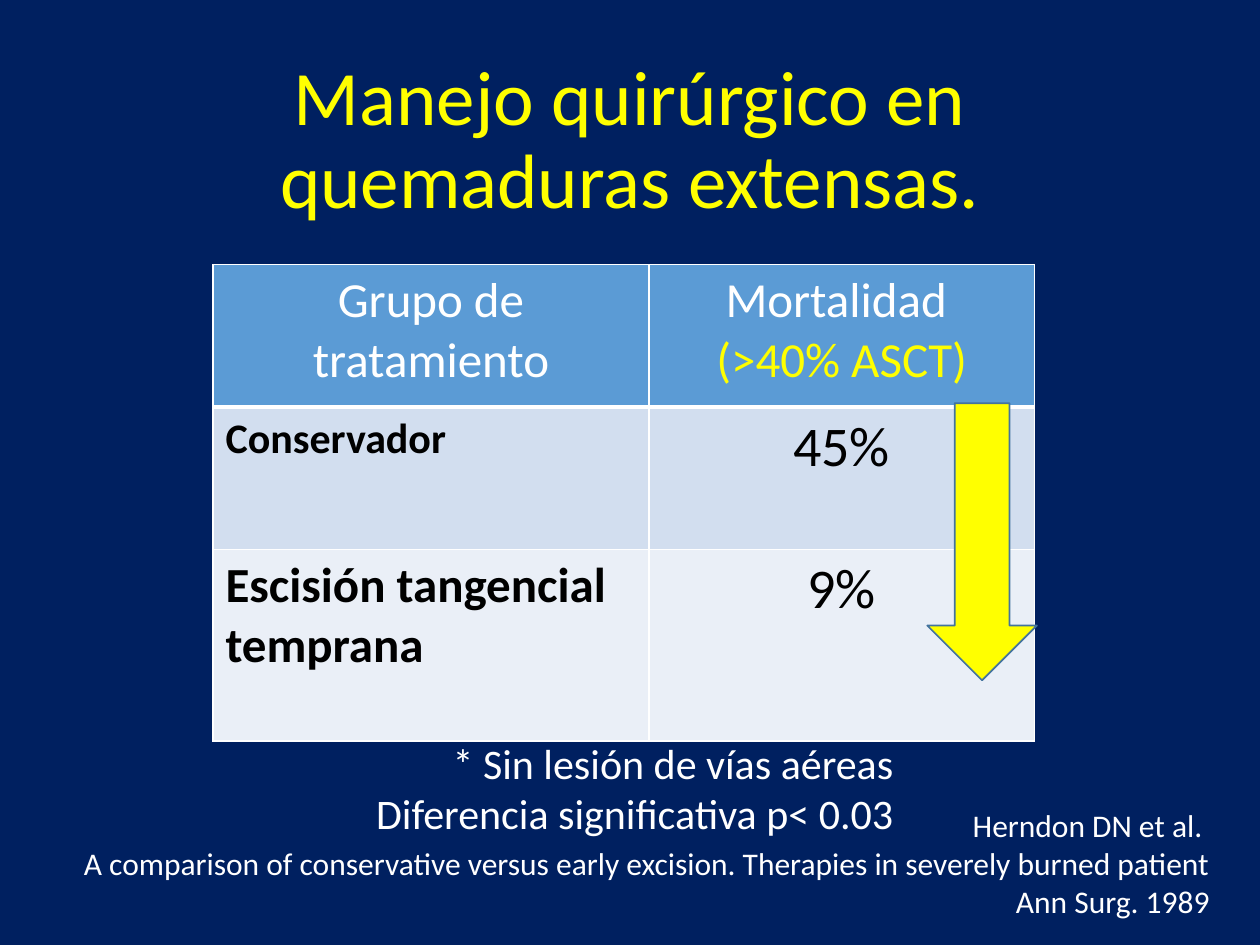
from lxml.etree import SubElement
from pptx import Presentation
from pptx.dml.color import RGBColor
from pptx.enum.shapes import MSO_SHAPE
from pptx.enum.text import MSO_ANCHOR, MSO_AUTO_SIZE, PP_ALIGN
from pptx.oxml.ns import qn
from pptx.util import Inches, Pt

NAVY = RGBColor(0x00, 0x20, 0x60)
YELLOW = RGBColor(0xFF, 0xFF, 0x00)
WHITE = RGBColor(0xFF, 0xFF, 0xFF)
BLACK = RGBColor(0x00, 0x00, 0x00)
HEADER_BLUE = RGBColor(0x5B, 0x9B, 0xD5)
BAND_DARK = RGBColor(0xD2, 0xDE, 0xEF)
BAND_LIGHT = RGBColor(0xEA, 0xEF, 0xF7)
ARROW_EDGE = RGBColor(0x43, 0x73, 0x9E)
CENTER, LEFT, RIGHT = PP_ALIGN.CENTER, PP_ALIGN.LEFT, PP_ALIGN.RIGHT


def write_lines(frame, lines, size, align, bold=False):
    for index, (text, color) in enumerate(lines):
        paragraph = frame.paragraphs[0] if index == 0 else frame.add_paragraph()
        paragraph.alignment = align
        run = paragraph.add_run()
        run.text = text
        run.font.name = "Calibri"
        run.font.size = Pt(size)
        run.font.bold = bold
        run.font.color.rgb = color


def add_border(cell, side, width):
    line = SubElement(cell._tc.get_or_add_tcPr(), qn(f"a:ln{side}"), w=str(Pt(width)))
    fill = SubElement(line, qn("a:solidFill"))
    SubElement(fill, qn("a:srgbClr"), val=str(WHITE))


presentation = Presentation()
presentation.slide_width = Inches(10)
presentation.slide_height = Inches(7.5)
slide = presentation.slides.add_slide(presentation.slide_layouts[5])
slide.background.fill.solid()
slide.background.fill.fore_color.rgb = NAVY

title = slide.shapes.title
title.left, title.top = Inches(0.69), Inches(0.4)
title.width, title.height = Inches(8.62), Inches(1.45)
title.text_frame.vertical_anchor = MSO_ANCHOR.MIDDLE
title.text_frame.auto_size = MSO_AUTO_SIZE.NONE
write_lines(title.text_frame, [("Manejo quirúrgico en quemaduras extensas.", YELLOW)], 44, CENTER)
title.text_frame.paragraphs[0].line_spacing = 0.9

column_widths = [3.46, 3.06]
row_heights = [1.13, 1.13, 1.52]
table_rows = [
    (HEADER_BLUE, [
        ([("Grupo de tratamiento", WHITE)], 28, CENTER, False),
        ([("Mortalidad ", WHITE), ("(>40% ASCT)", YELLOW)], 28, CENTER, False),
    ]),
    (BAND_DARK, [
        ([("Conservador", BLACK)], 24, LEFT, True),
        ([("45%", BLACK)], 32, CENTER, False),
    ]),
    (BAND_LIGHT, [
        ([("Escisión tangencial temprana", BLACK)], 28, LEFT, True),
        ([("9%", BLACK)], 32, CENTER, False),
    ]),
]
table = slide.shapes.add_table(
    len(row_heights), len(column_widths), Inches(1.69), Inches(2.1),
    Inches(sum(column_widths)), Inches(sum(row_heights))).table
for column, width in zip(table.columns, column_widths):
    column.width = Inches(width)
for row, height, (band, contents) in zip(table.rows, row_heights, table_rows):
    row.height = Inches(height)
    for cell, content in zip(row.cells, contents):
        write_lines(cell.text_frame, *content)
        for side in "LRTB":
            add_border(cell, side, 3 if side == "B" and band == HEADER_BLUE else 1)
        cell.fill.solid()
        cell.fill.fore_color.rgb = band

notes = [
    ((2.19, 5.8, 5, 1.31), 24, True,
     ["* Sin lesión de vías aéreas", "Diferencia significativa p< 0.03"]),
    ((0.46, 6.35, 9.24, 1.01), 18, False,
     ["Herndon DN et al. ",
      "A comparison of conservative versus early excision. Therapies in severely burned patient",
      "Ann Surg. 1989"]),
]
for box, size, wrap, lines in notes:
    frame = slide.shapes.add_textbox(*map(Inches, box)).text_frame
    frame.word_wrap = wrap
    frame.auto_size = MSO_AUTO_SIZE.SHAPE_TO_FIT_TEXT
    write_lines(frame, [(line, WHITE) for line in lines], size, RIGHT)

arrow = slide.shapes.add_shape(
    MSO_SHAPE.DOWN_ARROW, Inches(7.36), Inches(3.2), Inches(0.87), Inches(2.2))
arrow.shadow.inherit = False
arrow.fill.solid()
arrow.fill.fore_color.rgb = YELLOW
arrow.line.color.rgb = ARROW_EDGE
arrow.line.width = Pt(1)

presentation.save("out.pptx")
